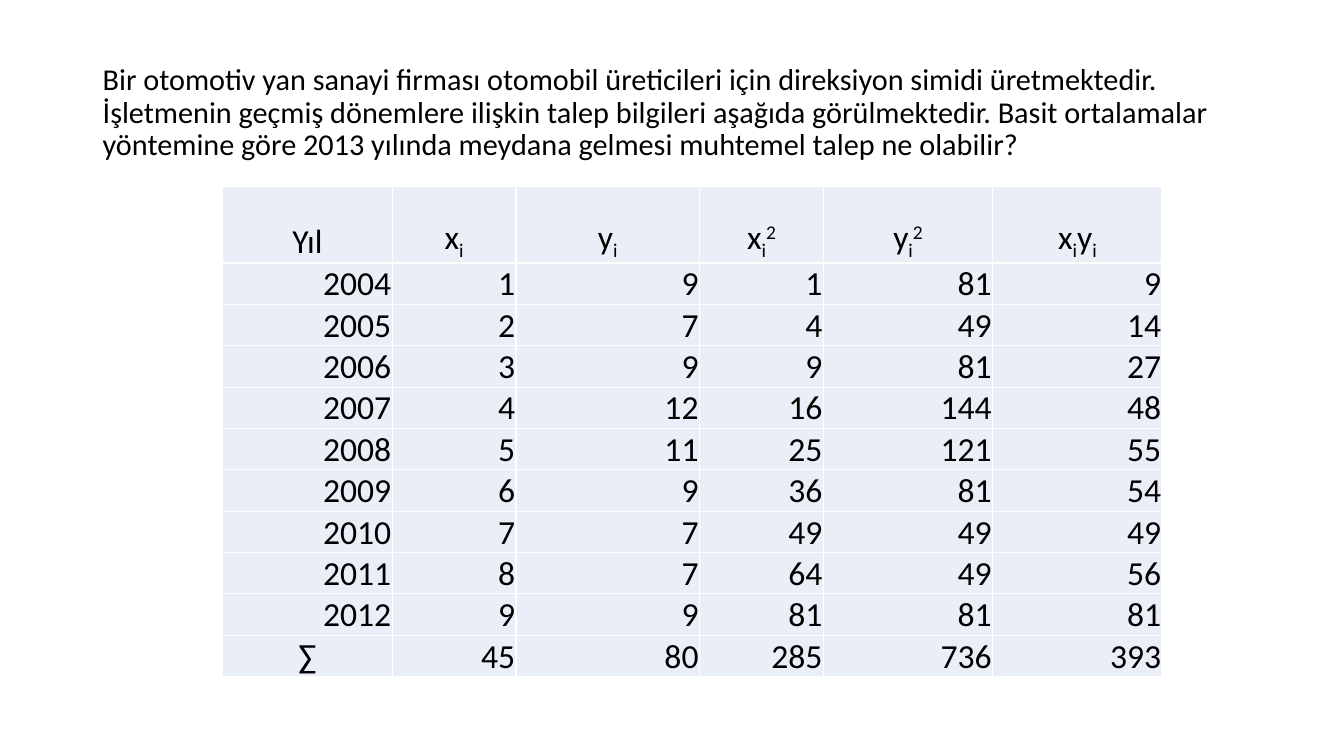
import pptx
import pptx.dml.color
import pptx.enum.text
import pptx.oxml
import pptx.oxml.ns
import pptx.util

WIDE = pptx.util.Inches(13.333)
HIGH = pptx.util.Inches(7.5)
COLORS = {"text": "000000", "cell": "EAEFF7", "rule": "FFFFFF"}
FONT = "Calibri"
ALIGN = pptx.enum.text.PP_ALIGN
ANCHOR = pptx.enum.text.MSO_ANCHOR
SHIFT = {"_": -25000, "^": 30000}

TITLE = (
    "Bir otomotiv yan sanayi firması otomobil üreticileri için direksiyon "
    "simidi üretmektedir. İşletmenin geçmiş dönemlere ilişkin talep bilgileri "
    "aşağıda görülmektedir. Basit ortalamalar yöntemine göre 2013 yılında "
    "meydana gelmesi muhtemel talep ne olabilir?"
)
HEADS = ["Yıl", "x_i", "y_i", "x_i^2", "y_i^2", "x_iy_i"]
START = 2004
DEMAND = [9, 7, 9, 12, 11, 9, 7, 7, 9]

# Percent of the slide's width and height
COLS = [12.6, 9.22, 13.65, 9.22, 12.6, 12.6]
HEAD_ROW = 10.13
BODY_ROW = 5.47


def across(share):
    return round(WIDE * share / 100)


def down(share):
    return round(HIGH * share / 100)


def area(left, top, width, height):
    return across(left), down(top), across(width), down(height)


def color(name):
    return pptx.dml.color.RGBColor.from_string(COLORS[name])


def pieces(text):
    """Split text into (piece, baseline); _ lowers and ^ raises one letter."""
    parts, mark = [], None
    for char in text:
        if char in SHIFT:
            mark = char
        elif mark:
            parts.append((char, SHIFT[mark]))
            mark = None
        elif parts and parts[-1][1] == 0:
            parts[-1] = (parts[-1][0] + char, 0)
        else:
            parts.append((char, 0))
    return parts


def write(frame, text, size=24, align=ALIGN.LEFT, space=1.0):
    para = frame.paragraphs[0]
    para.alignment = align
    para.line_spacing = space
    for piece, base in pieces(text):
        run = para.add_run()
        run.text = piece
        run.font.name = FONT
        run.font.size = pptx.util.Pt(size)
        run.font.color.rgb = color("text")
        if base:
            run.font._element.set("baseline", str(base))


def add_title(slide):
    box = slide.shapes.add_textbox(*area(6.9, 5.33, 86.25, 19.33))
    frame = box.text_frame
    frame.word_wrap = True
    frame.vertical_anchor = ANCHOR.MIDDLE
    write(frame, TITLE, size=21.6, space=0.9)


def edge(cell):
    """Draw a thin rule on all four sides of a cell."""
    props = cell._tc.get_or_add_tcPr()
    for place, side in enumerate(("lnL", "lnR", "lnT", "lnB")):
        line = pptx.oxml.parse_xml(
            f'<a:{side} {pptx.oxml.ns.nsdecls("a")} w="12700"><a:solidFill>'
            f'<a:srgbClr val="{COLORS["rule"]}"/></a:solidFill></a:{side}>'
        )
        props.insert(place, line)


def fill_cell(cell, text, align):
    cell.fill.solid()
    cell.fill.fore_color.rgb = color("cell")
    cell.vertical_anchor = ANCHOR.BOTTOM
    cell.margin_left = cell.margin_right = pptx.util.Inches(0.01)
    cell.margin_top = pptx.util.Inches(0.01)
    cell.margin_bottom = 0
    edge(cell)
    write(cell.text_frame, text, align=align)


def data_rows():
    """Return the yearly rows, then the row of sums."""
    rows = [
        [START + x - 1, x, y, x * x, y * y, x * y]
        for x, y in enumerate(DEMAND, 1)
    ]
    sums = [sum(col) for col in list(zip(*rows))[1:]]
    return rows + [["∑"] + sums]


def add_grid(slide):
    rows = [HEADS] + data_rows()
    tall = [HEAD_ROW] + [BODY_ROW] * (len(rows) - 1)
    place = area(16.58, 24.67, sum(COLS), sum(tall))
    table = slide.shapes.add_table(len(rows), len(COLS), *place).table
    table.first_row = table.horz_banding = False
    for col, share in zip(table.columns, COLS):
        col.width = across(share)
    for row, share in zip(table.rows, tall):
        row.height = down(share)
    for r, row in enumerate(rows):
        for c, value in enumerate(row):
            mid = r == 0 or value == "∑"
            align = ALIGN.CENTER if mid else ALIGN.RIGHT
            fill_cell(table.cell(r, c), str(value), align)


def main():
    deck = pptx.Presentation()
    deck.slide_width, deck.slide_height = WIDE, HIGH
    slide = deck.slides.add_slide(deck.slide_layouts[6])
    add_title(slide)
    add_grid(slide)
    deck.save("out.pptx")


if __name__ == "__main__":
    main()
